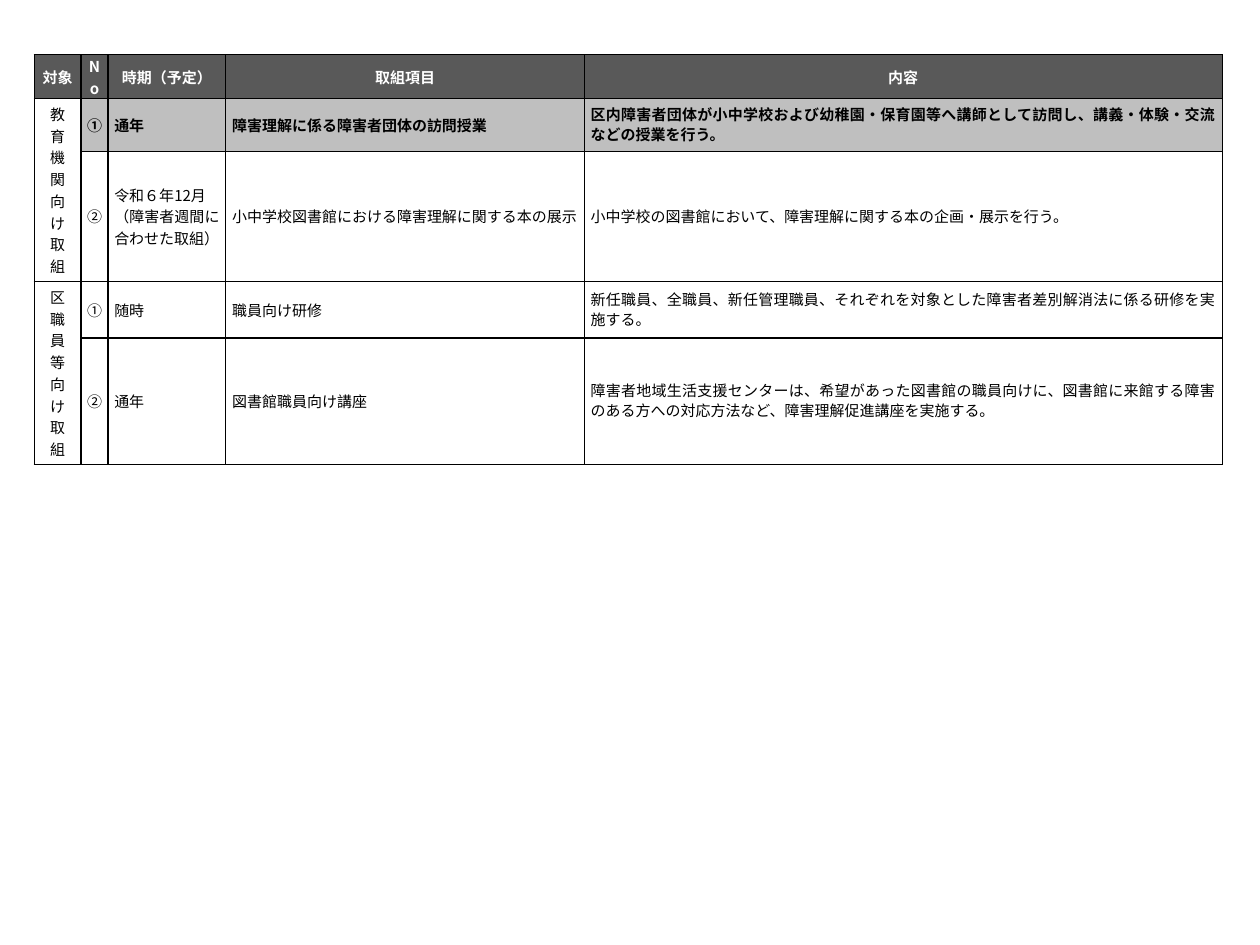
import pptx
import pptx.util
import pptx.dml.color
import pptx.enum.text
import pptx.oxml.ns
from lxml import etree

Inches = pptx.util.Inches
Pt = pptx.util.Pt
ALIGN = pptx.enum.text.PP_ALIGN
FONT = "Noto Sans CJK JP"
BLACK, WHITE, HEADER_GREY, HIGHLIGHT_GREY = "000000", "FFFFFF", "595959", "BFBFBF"

COLUMN_WIDTHS = [0.52, 0.3, 1.31, 3.98, 7.08]
ROW_HEIGHTS = [0.39, 0.59, 0.79, 0.63, 0.83]
HEADINGS = ["対象", "No", "時期（予定）", "取組項目", "内容"]
AUDIENCES = [["教育機関向け", "取組"], ["区職員等向け取組"]]
ACTIVITIES = [
    ("①", "通年", "障害理解に係る障害者団体の訪問授業",
     "区内障害者団体が小中学校および幼稚園・保育園等へ講師として訪問し、"
     "講義・体験・交流などの授業を行う。"),
    ("②", "令和６年12月\n（障害者週間に合わせた取組）",
     "小中学校図書館における障害理解に関する本の展示",
     "小中学校の図書館において、障害理解に関する本の企画・展示を行う。"),
    ("①", "随時", "職員向け研修",
     "新任職員、全職員、新任管理職員、それぞれを対象とした障害者差別解消法に係る研修を実施する。"),
    ("②", "通年", "図書館職員向け講座",
     "障害者地域生活支援センターは、希望があった図書館の職員向けに、"
     "図書館に来館する障害のある方への対応方法など、障害理解促進講座を実施する。"),
]


def rgb(hex_colour):
    return pptx.dml.color.RGBColor.from_string(hex_colour)


def qualified(tag):
    return pptx.oxml.ns.qn(tag)


def draw_borders(cell):
    properties = cell._tc.get_or_add_tcPr()
    for side in ("a:lnL", "a:lnR", "a:lnT", "a:lnB"):
        line = etree.SubElement(properties, qualified(side), w=str(Pt(1)))
        fill = etree.SubElement(line, qualified("a:solidFill"))
        etree.SubElement(fill, qualified("a:srgbClr"), val=BLACK)


def set_fill(cell, colour):
    if colour:
        cell.fill.solid()
        cell.fill.fore_color.rgb = rgb(colour)
    else:
        cell.fill.background()


def set_margins(cell, side, top=0):
    cell.margin_left = cell.margin_right = Inches(side)
    cell.margin_top = cell.margin_bottom = Inches(top)


def write_cell(cell, lines, align, colour=BLACK, bold=False, spacing=None):
    cell.vertical_anchor = pptx.enum.text.MSO_ANCHOR.MIDDLE
    frame = cell.text_frame
    for index, line in enumerate(lines):
        paragraph = frame.add_paragraph() if index else frame.paragraphs[0]
        paragraph.alignment = align
        if spacing:
            paragraph.line_spacing = spacing
        run = paragraph.add_run()
        run.text = line
        run.font.size = Pt(12)
        run.font.bold = bold
        run.font.color.rgb = rgb(colour)
        run.font.name = FONT
        etree.SubElement(run.font._element, qualified("a:ea"), typeface=FONT)


def fill_header(table):
    for column, heading in enumerate(HEADINGS):
        cell = table.cell(0, column)
        set_margins(cell, 0.04 if column < 2 else 0.07)
        set_fill(cell, HEADER_GREY)
        write_cell(cell, [heading], ALIGN.CENTER, WHITE, bold=True)


def fill_audiences(table):
    """Each audience spans two activity rows and is set vertically."""
    for index, lines in enumerate(AUDIENCES):
        top = 1 + 2 * index
        cell = table.cell(top, 0)
        cell.merge(table.cell(top + 1, 0))
        set_margins(cell, 0.1, 0.05)
        cell._tc.get_or_add_tcPr().set("vert", "eaVert")
        write_cell(cell, lines, ALIGN.CENTER)
        for row in (top, top + 1):
            set_fill(table.cell(row, 0), None)


def fill_activities(table):
    for row, activity in enumerate(ACTIVITIES, start=1):
        highlighted = row == 1
        for column, text in enumerate(activity, start=1):
            cell = table.cell(row, column)
            set_margins(cell, 0.04 if column == 1 else 0.07)
            set_fill(cell, HIGHLIGHT_GREY if highlighted else None)
            write_cell(cell, text.split("\n"),
                       ALIGN.CENTER if column == 1 else ALIGN.JUSTIFY,
                       bold=highlighted,
                       spacing=Pt(16) if column == 4 else None)


def add_plan_table(slide, left, top, width, height):
    table = slide.shapes.add_table(
        len(ROW_HEIGHTS), len(COLUMN_WIDTHS),
        Inches(left), Inches(top), Inches(width), Inches(height)).table
    table.first_row = table.horz_banding = False
    for column, column_width in zip(table.columns, COLUMN_WIDTHS):
        column.width = Inches(column_width * width / sum(COLUMN_WIDTHS))
    for row, row_height in zip(table.rows, ROW_HEIGHTS):
        row.height = Inches(row_height * height / sum(ROW_HEIGHTS))
    for cell in table.iter_cells():
        draw_borders(cell)
    fill_header(table)
    fill_audiences(table)
    fill_activities(table)


def main():
    presentation = pptx.Presentation()
    presentation.slide_width = Inches(14)
    presentation.slide_height = Inches(10.5)
    slide = presentation.slides.add_slide(presentation.slide_layouts[6])
    add_plan_table(slide, 0.38, 0.61, 13.2, 3.22)
    presentation.save("out.pptx")


if __name__ == "__main__":
    main()
